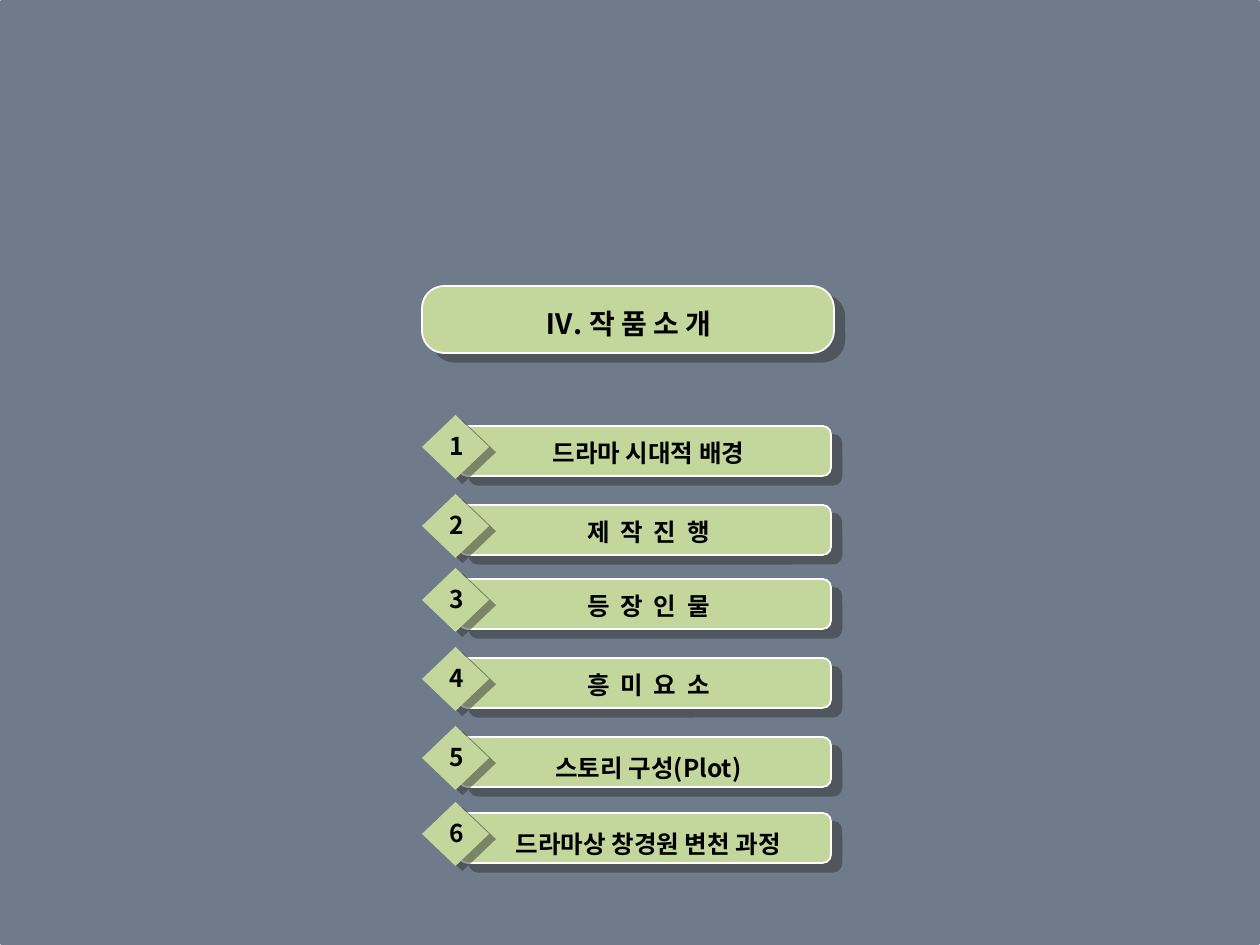
from dataclasses import dataclass

from lxml import etree
from pptx import Presentation
from pptx import util as u
from pptx.dml import color
from pptx.enum import shapes, text
from pptx.oxml import ns

PX = 914400 / 126
KIND = shapes.MSO_SHAPE


@dataclass(frozen=True)
class Theme:
    back: str = "0F243E"
    back_alpha: int = 60
    panel: str = "C3D69B"
    edge: str = "FFFFFF"
    shade: str = "333333"
    ink: str = "000000"
    font: str = "Noto Sans CJK KR"
    alt_font: str = "Arial"
    title: int = 16
    item: int = 14


T = Theme()
SPACED = {"spc": 150}
OUTLINE = {"line_spacing": 1.5, "dy": -5, "h": 52}

ITEMS = [
    (426, "드라마 시대적 배경", {}),
    (505, "제 작 진 행", {"font": T.alt_font, **SPACED}),
    (579, "등 장 인 물", {"font": T.alt_font, **SPACED}),
    (658, "흥 미 요 소", SPACED),
    (737, "스토리 구성(Plot)", OUTLINE),
    (813, "드라마상 창경원 변천 과정", OUTLINE),
]


def rgb(value):
    return color.RGBColor.from_string(value)


def emu(*lengths):
    return [u.Emu(round(n * PX)) for n in lengths]


def add_panel(parent, kind, box, fill, adj=None, edge=None, shadow=None):
    sp = parent.add_shape(kind, *emu(*box))
    sp.fill.solid()
    sp.fill.fore_color.rgb = rgb(fill)
    if adj is not None:
        sp.adjustments[0] = adj
    if edge:
        sp.line.color.rgb = rgb(edge)
        sp.line.width = u.Pt(1)
    else:
        sp.line.fill.background()
    sp.shadow.inherit = False
    if shadow:
        dist, angle = shadow
        effects = sp._element.spPr.find(ns.qn("a:effectLst"))
        outer = etree.SubElement(effects, ns.qn("a:outerShdw"), blurRad="0",
                                 dist=str(u.Pt(dist)), dir=str(angle * 60000),
                                 algn="ctr", rotWithShape="0")
        clr = etree.SubElement(outer, ns.qn("a:srgbClr"), val=T.shade)
        etree.SubElement(clr, ns.qn("a:alpha"), val="50000")
    return sp


def add_label(parent, box, words, size, font=T.font, wrap=True, spc=None,
              line_spacing=None):
    tf = parent.add_textbox(*emu(*box)).text_frame
    tf.word_wrap = wrap
    p = tf.paragraphs[0]
    if wrap:
        p.alignment = text.PP_ALIGN.CENTER
    if line_spacing:
        p.line_spacing = line_spacing
    r = p.add_run()
    r.text = words
    for key, value in {"size": u.Pt(size), "bold": True, "name": font}.items():
        setattr(r.font, key, value)
    r.font.color.rgb = rgb(T.ink)
    rpr = r._r.get_or_add_rPr()
    etree.SubElement(rpr, ns.qn("a:ea"), typeface=T.font)
    if spc:
        rpr.set("spc", str(spc))


def add_backdrop(s, w, h):
    sp = add_panel(s.shapes, KIND.ROUNDED_RECTANGLE, (0, 0, w, h), T.back, 0.002)
    clr = sp._element.spPr.find(".//" + ns.qn("a:srgbClr"))
    etree.SubElement(clr, ns.qn("a:alpha"), val=str(T.back_alpha * 1000))


def add_title(s, x, y, w, h):
    g = s.shapes.add_group_shape().shapes
    add_panel(g, KIND.ROUNDED_RECTANGLE, (x, y, w, h), T.panel, 0.334, T.edge, (7.8, 40))
    add_label(g, (x + 20, y + 14, w - 39, 47), "Ⅳ. 작 품 소 개", T.title)


def add_item(s, x, y, w, h, number, words, style):
    style = dict(style)
    dy, label_h = style.pop("dy", 6), style.pop("h", 43)
    g = s.shapes.add_group_shape().shapes
    add_panel(g, KIND.ROUNDED_RECTANGLE, (x + 37, y, w - 37, h), T.panel, 0.167,
              T.edge, (7.8, 40))
    add_panel(g, KIND.DIAMOND, (x, y - 11, 67, 64), T.panel, shadow=(5, 37))
    add_label(g, (x + 59, y + dy, w - 74, label_h), words, T.item, **style)
    add_label(g, (x + 15, y - 1, 40, 43), str(number), T.item, wrap=False)


def main():
    prs = Presentation()
    prs.slide_width, prs.slide_height = u.Inches(10), u.Inches(7.5)
    s = prs.slides.add_slide(prs.slide_layouts[6])
    add_backdrop(s, 1260, 945)
    add_title(s, 422, 286, 412, 67)
    for number, (y, words, style) in enumerate(ITEMS, 1):
        add_item(s, 422, y, 409, 50, number, words, style)
    prs.save("out.pptx")


if __name__ == "__main__":
    main()
